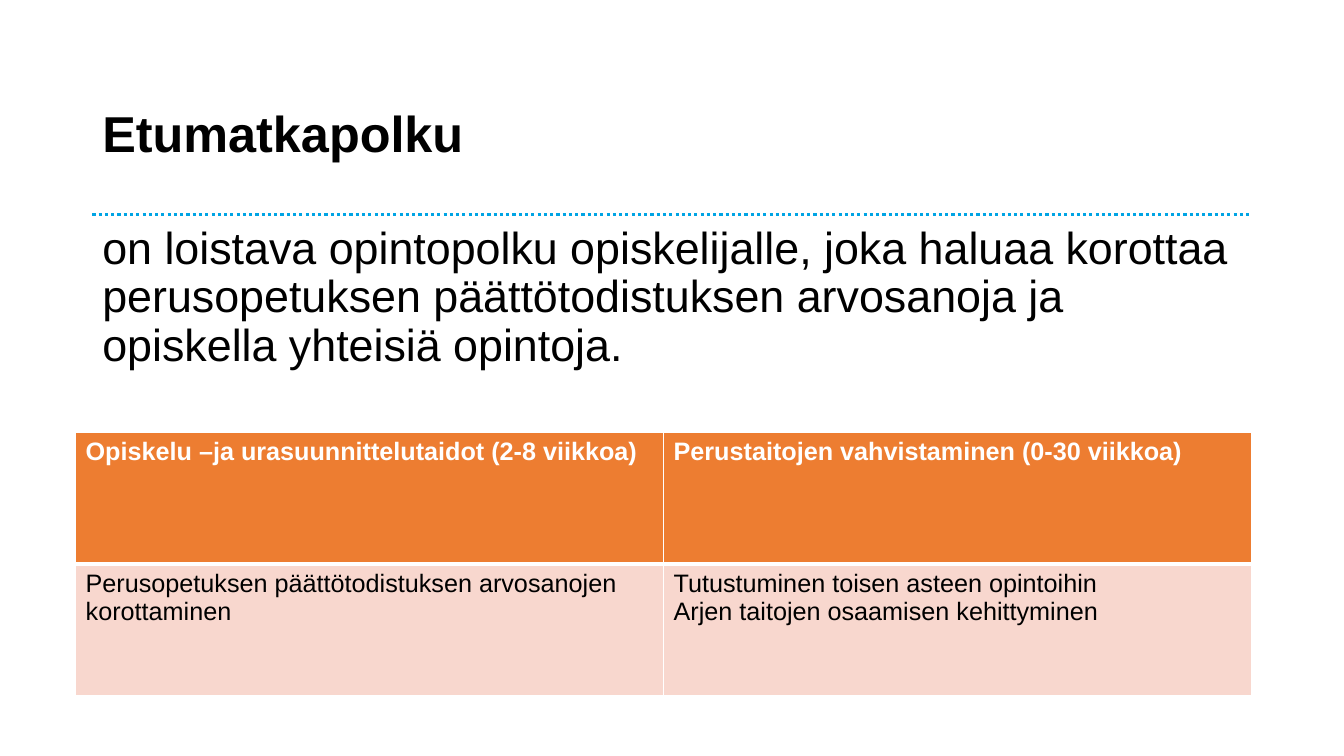
import pptx
import pptx.util
import pptx.oxml.xmlchemy
import pptx.dml.color
import pptx.enum.dml
import pptx.enum.shapes
import pptx.enum.text

Pt = pptx.util.Pt
make = pptx.oxml.xmlchemy.OxmlElement
COLORS = {"black": "000000", "white": "FFFFFF", "cyan": "00A4E4",
          "orange": "ED7D31", "peach": "F8D7CE"}


def rgb(name):
    return pptx.dml.color.RGBColor.from_string(COLORS[name])


def write(frame, lines, size, color, bold=False, space=None):
    """Fill a text frame with one run per paragraph."""
    frame.word_wrap = True
    for i, line in enumerate(lines):
        para = frame.paragraphs[0] if i == 0 else frame.add_paragraph()
        para.line_spacing = space
        run = para.add_run()
        run.text = line
        run.font.name = "Arial"
        run.font.size = Pt(size)
        run.font.bold = bold
        run.font.color.rgb = rgb(color)


deck = pptx.Presentation()
deck.slide_width, deck.slide_height = Pt(960), Pt(540)
slide = deck.slides.add_slide(deck.slide_layouts[6])
shapes = slide.shapes

# Dotted rule under the title
rule = shapes.add_connector(pptx.enum.shapes.MSO_CONNECTOR.STRAIGHT,
                            Pt(66), Pt(153.3), Pt(894), Pt(153.3))
rule.line.color.rgb = rgb("cyan")
rule.line.width = Pt(2.25)
rule.line.dash_style = pptx.enum.dml.MSO_LINE.ROUND_DOT
rule._element.spPr.append(make("a:effectLst"))

# Title and body
title = shapes.add_textbox(Pt(66), Pt(43.2), Pt(828), Pt(104.4)).text_frame
title.vertical_anchor = pptx.enum.text.MSO_ANCHOR.MIDDLE
title.margin_top = Pt(8)
write(title, ["Etumatkapolku"], 36, "black", True, 0.9)

body = shapes.add_textbox(Pt(66), Pt(157.7), Pt(828), Pt(303)).text_frame
write(body, ["on loistava opintopolku opiskelijalle, joka haluaa korottaa "
             "perusopetuksen päättötodistuksen arvosanoja ja opiskella "
             "yhteisiä opintoja."], 32, "black", space=0.9)

# Table of studies
rows = [
    [["Opiskelu –ja urasuunnittelutaidot (2-8 viikkoa)"],
     ["Perustaitojen vahvistaminen (0-30 viikkoa)"]],
    [["Perusopetuksen päättötodistuksen arvosanojen", "korottaminen"],
     ["Tutustuminen toisen asteen opintoihin",
      "Arjen taitojen osaamisen kehittyminen"]],
]
styles = [("orange", "white", True), ("peach", "black", False)]
table = shapes.add_table(2, 2, Pt(54), Pt(309), Pt(840), Pt(188)).table
for r, (row, (fill, ink, bold)) in enumerate(zip(rows, styles)):
    for c, lines in enumerate(row):
        cell = table.cell(r, c)
        write(cell.text_frame, lines, 18, ink, bold)
        props = cell._tc.get_or_add_tcPr()
        for side in "LRTB":
            thick = (r, side) in [(0, "B"), (1, "T")]
            edge = make("a:ln" + side)
            edge.set("w", str(Pt(3 if thick else 1)))
            paint = make("a:solidFill")
            tint = make("a:srgbClr")
            tint.set("val", COLORS["white"])
            paint.append(tint)
            edge.append(paint)
            props.append(edge)
        cell.fill.solid()
        cell.fill.fore_color.rgb = rgb(fill)

deck.save("out.pptx")
